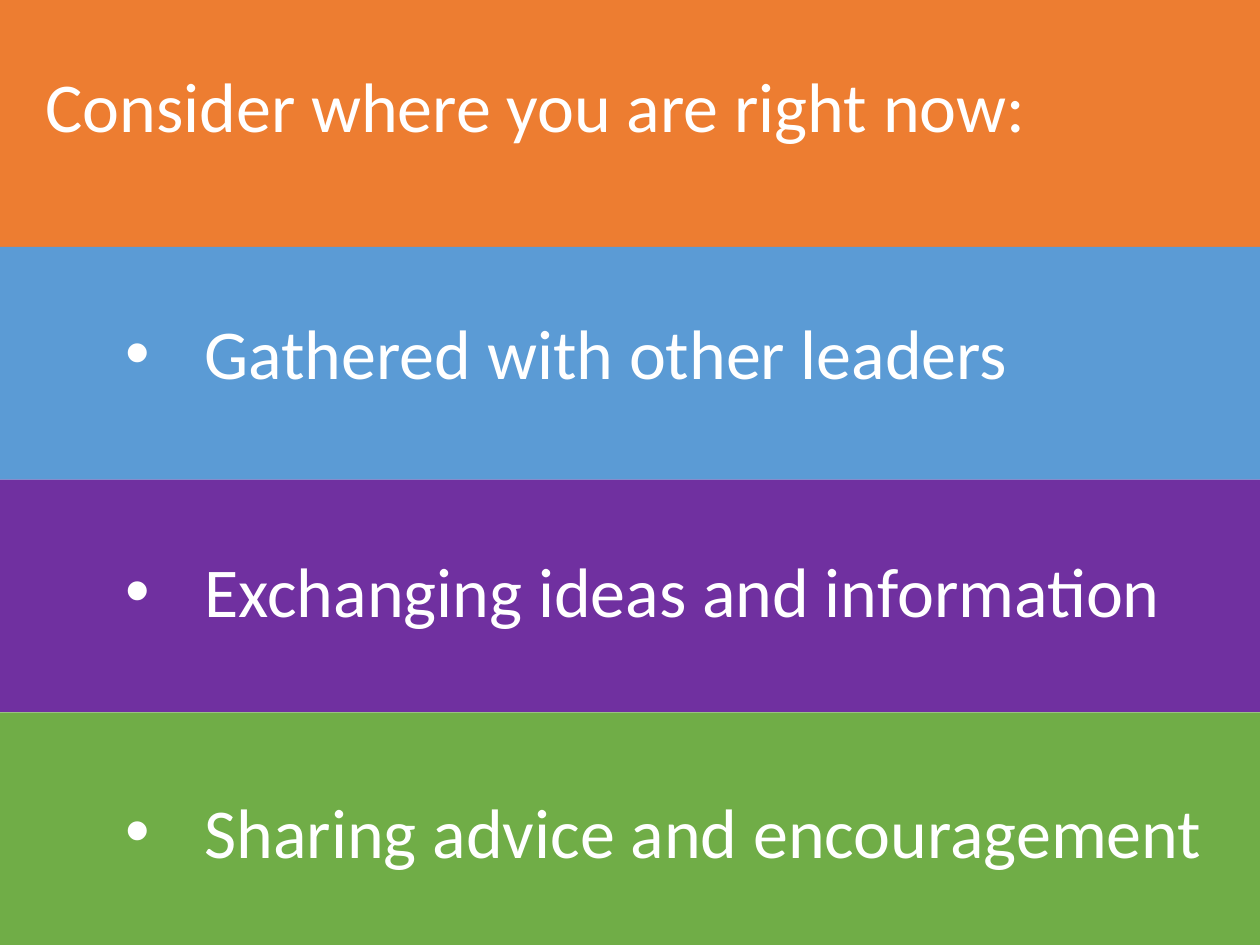
from dataclasses import dataclass

from lxml.etree import SubElement
from pptx import Presentation
from pptx.dml.color import RGBColor
from pptx.enum.shapes import MSO_SHAPE
from pptx.enum.text import MSO_ANCHOR, MSO_AUTO_SIZE, PP_ALIGN
from pptx.oxml.ns import qn
from pptx.util import Pt

# Content: text, band colour, text top and text width
TITLE = "Consider where you are right now:"
POINTS = [
    ("Gathered with other leaders", "5B9BD5", 173.5, 571),
    ("Exchanging ideas and information", "7030A0", 309.6, 624),
    ("Sharing advice and encouragement", "70AD47", 447.1, 643),
]


@dataclass(frozen=True)
class Theme:
    font: str = "Calibri"
    size: int = 40
    text: str = "FFFFFF"
    title_band: str = "ED7D31"


THEME = Theme()
PAGE_WIDTH, PAGE_HEIGHT = 720, 540
TITLE_BAND_HEIGHT = 141.1
BAND_HEIGHT = (PAGE_HEIGHT - TITLE_BAND_HEIGHT) / len(POINTS)
TEXT_HEIGHT = 55.7
POINT_LEFT = 64.8
BULLET_INDENT = 45


def add_block(page, left, top, width, height, colour):
    block = page.shapes.add_shape(
        MSO_SHAPE.RECTANGLE, Pt(left), Pt(top), Pt(width), Pt(height))
    block.shadow.inherit = False
    block.fill.solid()
    block.fill.fore_color.rgb = RGBColor.from_string(colour)
    block.line.fill.background()
    return block


def add_bullet(para):
    properties = para._p.get_or_add_pPr()
    properties.set("marL", str(Pt(BULLET_INDENT)))
    properties.set("indent", str(-Pt(BULLET_INDENT)))
    SubElement(properties, qn("a:buFont")).set("typeface", "Arial")
    SubElement(properties, qn("a:buChar")).set("char", "•")


def write_text(box, text, bullet=False):
    frame = box.text_frame
    frame.text = text
    frame.word_wrap = True
    frame.auto_size = MSO_AUTO_SIZE.SHAPE_TO_FIT_TEXT
    frame.vertical_anchor = MSO_ANCHOR.TOP
    para = frame.paragraphs[0]
    para.alignment = PP_ALIGN.LEFT
    if bullet:
        add_bullet(para)
    para.font.name = THEME.font
    para.font.size = Pt(THEME.size)
    para.font.color.rgb = RGBColor.from_string(THEME.text)


def main():
    deck = Presentation()
    deck.slide_width, deck.slide_height = Pt(PAGE_WIDTH), Pt(PAGE_HEIGHT)
    page = deck.slides.add_slide(deck.slide_layouts[5])

    # Title on its band
    band = add_block(page, 0, 0, PAGE_WIDTH, TITLE_BAND_HEIGHT, THEME.title_band)
    title = page.shapes.title
    band.element.addnext(title.element)
    title.left, title.top = Pt(18.7), Pt(32.4)
    title.width, title.height = Pt(624), Pt(TEXT_HEIGHT)
    write_text(title, TITLE)

    # One band for each point
    for index, (text, colour, text_top, text_width) in enumerate(POINTS):
        band_top = TITLE_BAND_HEIGHT + index * BAND_HEIGHT
        add_block(page, 0, band_top, PAGE_WIDTH, BAND_HEIGHT, colour)
        box = add_block(page, POINT_LEFT, text_top, text_width, TEXT_HEIGHT, colour)
        write_text(box, text, bullet=True)

    deck.save("out.pptx")


if __name__ == "__main__":
    main()
